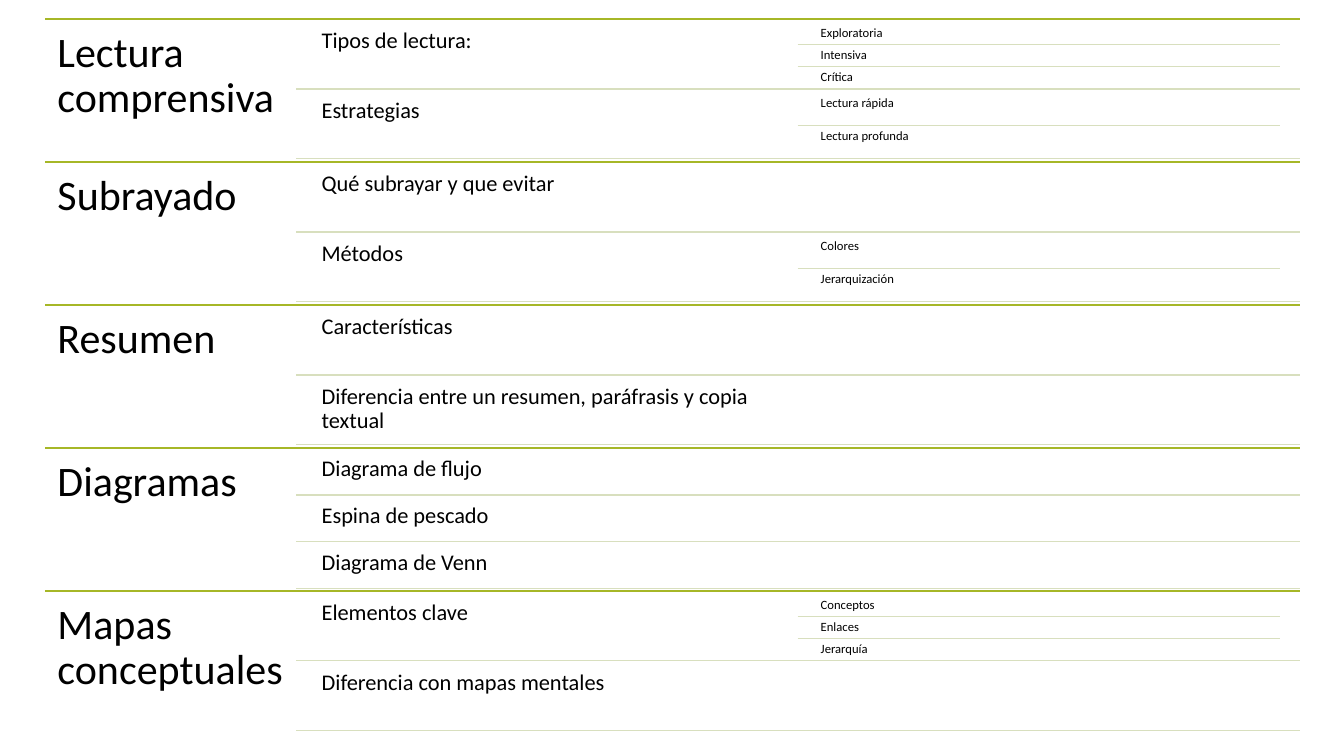
from lxml import etree
from pptx import Presentation
from pptx.dml.color import RGBColor
from pptx.enum import shapes, text
from pptx.oxml import ns
from pptx.util import Inches, Pt

BLACK, GREEN, PALE_GREEN = "000000", "A6B727", "D8DFBE"
LEFT, RIGHT = 0.45, 12.89
TOP, BOTTOM = 0.19, 7.28
ENTRY_RULE_LEFT = 2.94
ENTRY_LEFT, ENTRY_WIDTH = 3.12, 4.79
DETAIL_RULE_LEFT, DETAIL_LEFT = 7.91, 8.1
GAP_RATIO = 0.05  # gap between entries, as a share of the entry height

TOPICS = [
    ("Lectura comprensiva", [
        ("Tipos de lectura:", ["Exploratoria", "Intensiva", "Crítica"]),
        ("Estrategias", ["Lectura rápida", "Lectura profunda"]),
    ]),
    ("Subrayado", [
        ("Qué subrayar y que evitar", []),
        ("Métodos", ["Colores", "Jerarquización"]),
    ]),
    ("Resumen", [
        ("Características", []),
        ("Diferencia entre un resumen, paráfrasis y copia textual", []),
    ]),
    ("Diagramas", [
        ("Diagrama de flujo", []),
        ("Espina de pescado", []),
        ("Diagrama de Venn", []),
    ]),
    ("Mapas conceptuales", [
        ("Elementos clave", ["Conceptos", "Enlaces", "Jerarquía"]),
        ("Diferencia con mapas mentales", []),
    ]),
]


def add_text(words, *, left, top, width, height, size, inset, color=BLACK):
    box = page.shapes.add_textbox(Inches(left), Inches(top), Inches(width), Inches(height))
    frame = box.text_frame
    frame.word_wrap = True
    frame.vertical_anchor = text.MSO_ANCHOR.TOP
    frame.margin_left = frame.margin_right = Inches(inset)
    frame.margin_top = frame.margin_bottom = Inches(inset)
    para = frame.paragraphs[0]
    para.line_spacing = 0.9
    span = para.add_run()
    span.text = words
    span.font.name = "Calibri"
    span.font.size = Pt(size)
    span.font.color.rgb = RGBColor.from_string(color)


def add_rule(left, right, y, color):
    """Draw a horizontal line without a shadow."""
    rule = page.shapes.add_connector(
        shapes.MSO_CONNECTOR.STRAIGHT, Inches(left), Inches(y), Inches(right), Inches(y))
    rule.line.color.rgb = RGBColor.from_string(color)
    rule.line.width = Pt(1)
    etree.SubElement(rule._element.spPr, ns.qn("a:effectLst"))


deck = Presentation()
deck.slide_width, deck.slide_height = Inches(13.33), Inches(7.5)
page = deck.slides.add_slide(deck.slide_layouts[6])

topic_height = (BOTTOM - TOP) / len(TOPICS)
for index, (topic, entries) in enumerate(TOPICS):
    topic_top = TOP + index * topic_height
    add_rule(LEFT, RIGHT, topic_top, GREEN)
    add_text(topic, left=LEFT, top=topic_top, width=ENTRY_RULE_LEFT - LEFT,
             height=topic_height, size=30, inset=0.12)

    count = len(entries)
    entry_height = topic_height / (count + (count + 1) * GAP_RATIO)
    gap = entry_height * GAP_RATIO
    for row, (entry, details) in enumerate(entries):
        entry_top = topic_top + gap + row * (entry_height + gap)
        add_text(entry, left=ENTRY_LEFT, top=entry_top, width=ENTRY_WIDTH,
                 height=entry_height, size=16, inset=0.07)
        for step, detail in enumerate(details):
            detail_height = entry_height / len(details)
            detail_top = entry_top + step * detail_height
            if step:
                add_rule(DETAIL_RULE_LEFT, DETAIL_RULE_LEFT + ENTRY_WIDTH, detail_top, PALE_GREEN)
            add_text(detail, left=DETAIL_LEFT, top=detail_top, width=ENTRY_WIDTH,
                     height=detail_height, size=9, inset=0.04)
        add_rule(ENTRY_RULE_LEFT, RIGHT, entry_top + entry_height, PALE_GREEN)

deck.save("out.pptx")
